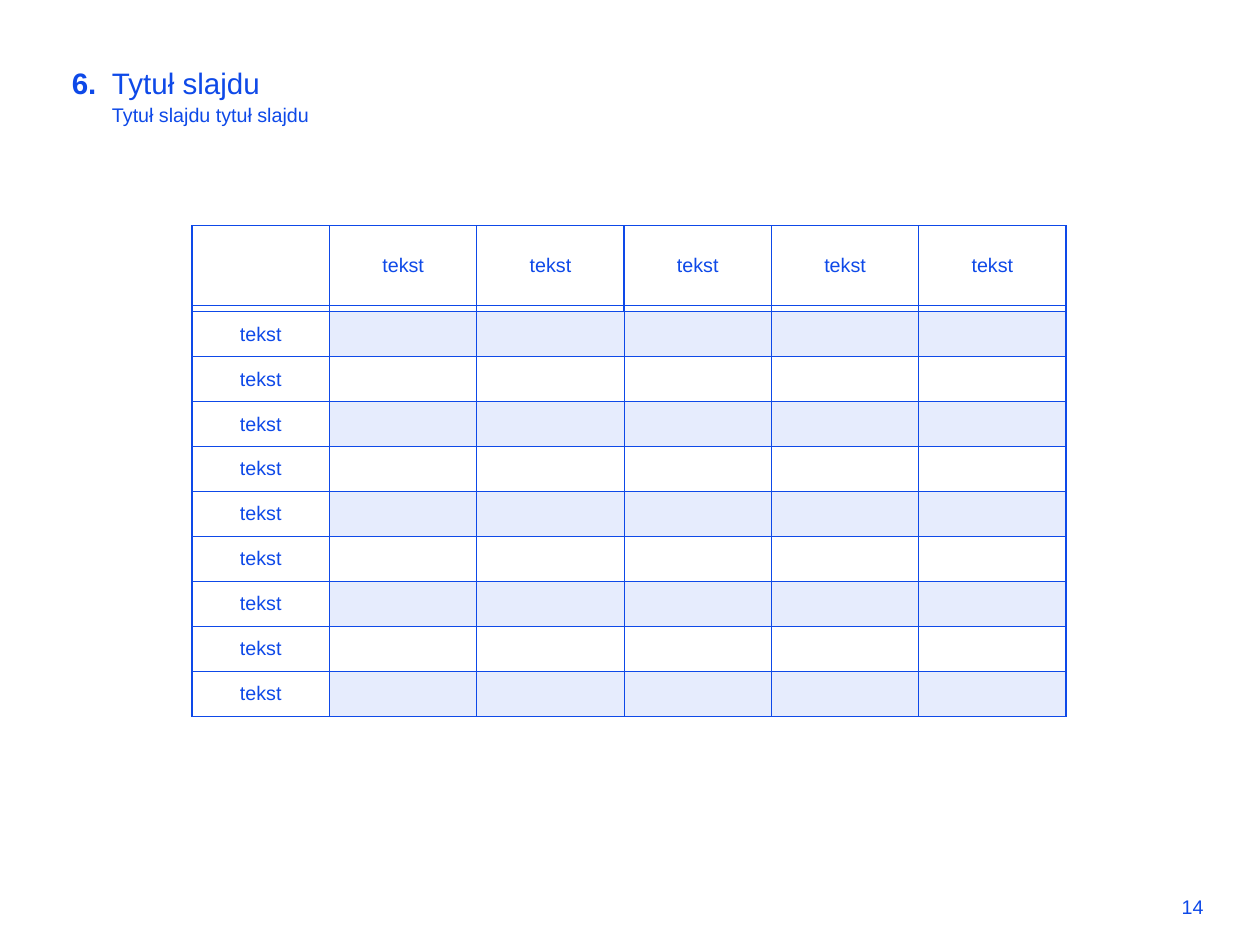
from lxml import etree
from pptx import Presentation
from pptx.dml.color import RGBColor
from pptx.enum.text import MSO_ANCHOR, PP_ALIGN
from pptx.oxml.ns import qn
from pptx.util import Pt

LEFT, CENTER, RIGHT = PP_ALIGN.LEFT, PP_ALIGN.CENTER, PP_ALIGN.RIGHT
TOP, MIDDLE = MSO_ANCHOR.TOP, MSO_ANCHOR.MIDDLE

# Content
FONT = "Arial"
COLORS = {"blue": "0E49E8", "band": "E6ECFD"}
# text, (left, top, width, height), size, bold, alignment, anchor, line spacing
TEXTS = [
    ("Tytuł slajdu", (163.5, 80, 1411, 70.5), 45, False, LEFT, TOP, 70),
    ("14", (1713, 1359.5, 127.5, 44), 30, False, RIGHT, MIDDLE, None),
    ("6.", (38, 80, 116, 70.5), 45, True, RIGHT, TOP, 70),
    ("Tytuł slajdu tytuł slajdu", (163.5, 144.5, 1411, 52.5), 30, False, LEFT, TOP, 45),
]
HEADER = [""] + ["tekst"] * 5
ROW_LABELS = ["tekst"] * 9
ROWS = [HEADER, [""] * 6] + [[label] + [""] * 5 for label in ROW_LABELS]

# Table geometry
TABLE_LEFT, TABLE_TOP = 292.5, 344
COLUMN_WIDTHS = [209.5] + [224.4] * 5
ROW_HEIGHTS = [122, 9.2] + [68.5] * len(ROW_LABELS)
HEADER_ROWS = 2
THIN, THICK = 1.5, 2.25
THICK_COLUMN_EDGES = {0, 1, len(COLUMN_WIDTHS)}
THICK_ROW_EDGES = {0, 1, HEADER_ROWS, len(ROWS)}


def format_paragraph(paragraph, size, bold, alignment):
    paragraph.alignment = alignment
    for run in paragraph.runs:
        run.font.name = FONT
        run.font.size = Pt(size)
        run.font.bold = bold
        run.font.color.rgb = RGBColor.from_string(COLORS["blue"])


def add_text(slide, text, box, size, bold, alignment, anchor, spacing):
    text_frame = slide.shapes.add_textbox(*map(Pt, box)).text_frame
    text_frame.word_wrap = True
    text_frame.vertical_anchor = anchor
    text_frame.text = text
    paragraph = text_frame.paragraphs[0]
    if spacing:
        paragraph.line_spacing = Pt(spacing)
    format_paragraph(paragraph, size, bold, alignment)


def set_borders(cell, row, column):
    def column_edge(edge):
        return THICK if row < HEADER_ROWS or edge in THICK_COLUMN_EDGES else THIN

    def row_edge(edge):
        return THICK if edge in THICK_ROW_EDGES else THIN

    widths = {
        "a:lnL": column_edge(column),
        "a:lnR": column_edge(column + 1),
        "a:lnT": row_edge(row),
        "a:lnB": row_edge(row + 1),
    }
    properties = cell._tc.get_or_add_tcPr()
    for tag, width in widths.items():
        line = etree.SubElement(properties, qn(tag), w=str(Pt(width)))
        fill = etree.SubElement(line, qn("a:solidFill"))
        etree.SubElement(fill, qn("a:srgbClr"), val=COLORS["blue"])


def fill_cell(cell, text, row, column):
    set_borders(cell, row, column)
    cell.vertical_anchor = MIDDLE
    # Every other body row is banded, apart from its label
    if row >= HEADER_ROWS and row % 2 == 0 and column > 0:
        cell.fill.solid()
        cell.fill.fore_color.rgb = RGBColor.from_string(COLORS["band"])
    else:
        cell.fill.background()
    paragraph = cell.text_frame.paragraphs[0]
    if text:
        paragraph.text = text
        format_paragraph(paragraph, 30, False, CENTER)
    elif row == 1:
        # The narrow separator row needs tiny empty text and no margins
        cell.margin_top = cell.margin_bottom = 0
        etree.SubElement(paragraph._p, qn("a:endParaRPr"), sz="100")


def add_grid(slide):
    frame = slide.shapes.add_table(
        len(ROWS), len(COLUMN_WIDTHS), Pt(TABLE_LEFT), Pt(TABLE_TOP),
        Pt(sum(COLUMN_WIDTHS)), Pt(sum(ROW_HEIGHTS)))
    table = frame.table
    table.first_row = table.horz_banding = False
    for column, width in zip(table.columns, COLUMN_WIDTHS):
        column.width = Pt(width)
    for row, height in zip(table.rows, ROW_HEIGHTS):
        row.height = Pt(height)
    for row, texts in enumerate(ROWS):
        for column, text in enumerate(texts):
            fill_cell(table.cell(row, column), text, row, column)


def main():
    presentation = Presentation()
    presentation.slide_width, presentation.slide_height = Pt(1919.5), Pt(1440)
    slide = presentation.slides.add_slide(presentation.slide_layouts[6])
    # Title, section number, subtitle and page number
    for item in TEXTS:
        add_text(slide, *item)
    # Table
    add_grid(slide)
    presentation.save("out.pptx")


if __name__ == "__main__":
    main()
